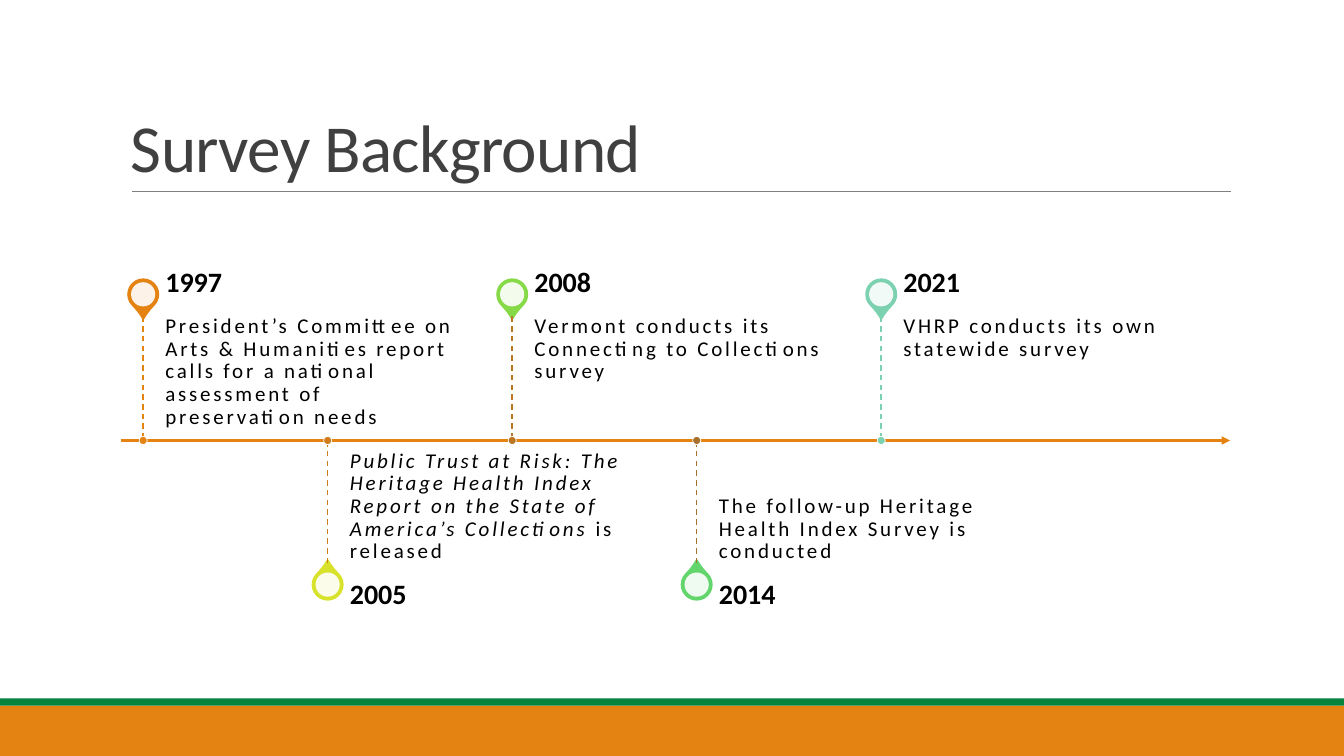
from lxml.etree import SubElement
from pptx import Presentation
from pptx.dml.color import RGBColor
from pptx.enum.dml import MSO_LINE
from pptx.enum.shapes import MSO_CONNECTOR, MSO_SHAPE
from pptx.enum.text import MSO_ANCHOR
from pptx.oxml.ns import qn
from pptx.util import Inches, Pt

COLORS = {
    "orange": "E48312",
    "green": "05823B",
    "rule": "808080",
    "title": "404040",
    "text": "000000",
    "white": "FFFFFF",
}
AXIS_Y = 4.37
FIRST_X = 1.42
STEP_X = 1.83
PIN_SIZE = 0.3
HOLE_SIZE = 0.24
DOT_SIZE = 0.08
TEXT_GAP = 0.22
TEXT_WIDTH = 3.05
STORY_HEIGHT = 1.23
YEAR_HEIGHT = 0.43

EVENTS = [
    ("1997", "E48312", "E48312", [
        ("President’s Committee on Arts & Humanities report calls for "
         "a national assessment of preservation needs", False)]),
    ("2005", "D8E22A", "CF7D1C", [
        ("Public Trust at Risk: The Heritage Health Index Report on "
         "the State of America’s Collections ", True),
        ("is released", False)]),
    ("2008", "86DA47", "BA7624", [
        ("Vermont conducts its Connecting to Collections survey", False)]),
    ("2014", "63D56D", "A7702C", [
        ("The follow-up Heritage Health Index Survey is conducted", False)]),
    ("2021", "7CD1B0", "7CD1B0", [
        ("VHRP conducts its own statewide survey", False)]),
]


def add_filled(slide, preset, left, top, width, height, fill, edge=None, edge_width=0):
    figure = slide.shapes.add_shape(
        preset, Inches(left), Inches(top), Inches(width), Inches(height))
    figure.shadow.inherit = False
    figure.fill.solid()
    figure.fill.fore_color.rgb = RGBColor.from_string(fill)
    if edge:
        figure.line.color.rgb = RGBColor.from_string(edge)
        figure.line.width = Pt(edge_width)
    else:
        figure.line.fill.background()
    return figure


def add_circle(slide, center_x, center_y, size, fill, edge=None, edge_width=0):
    return add_filled(slide, MSO_SHAPE.OVAL, center_x - size / 2, center_y - size / 2,
                      size, size, fill, edge, edge_width)


def add_line(slide, start, end, color, width):
    line = slide.shapes.add_connector(
        MSO_CONNECTOR.STRAIGHT, *(Inches(value) for value in start + end))
    line.line.color.rgb = RGBColor.from_string(color)
    line.line.width = Pt(width)
    SubElement(line._element.spPr, qn("a:effectLst"))
    return line


def add_text(slide, box, runs, size, color, anchor, insets,
             line_spacing=0.9, bold=False, tracking=0):
    label = slide.shapes.add_textbox(*(Inches(value) for value in box))
    frame = label.text_frame
    frame.word_wrap = True
    frame.vertical_anchor = anchor
    (frame.margin_left, frame.margin_top,
     frame.margin_right, frame.margin_bottom) = (Inches(value) for value in insets)
    paragraph = frame.paragraphs[0]
    paragraph.line_spacing = line_spacing
    for words, italic in runs:
        run = paragraph.add_run()
        run.text = words
        run.font.name = "Calibri"
        run.font.size = Pt(size)
        run.font.bold = bold
        run.font.italic = italic
        run.font.color.rgb = RGBColor.from_string(color)
        run._r.get_or_add_rPr().set("spc", str(round(tracking * 100)))


def add_axis(slide):
    axis = add_line(slide, (1.2, AXIS_Y), (12.2, AXIS_Y), COLORS["orange"], 1.5)
    SubElement(axis.line._get_or_add_ln(), qn("a:tailEnd"), type="triangle")


def add_pin(slide, x, y, color, rotation):
    pin = add_filled(slide, MSO_SHAPE.TEAR, x - PIN_SIZE / 2, y - PIN_SIZE / 2,
                     PIN_SIZE, PIN_SIZE, color, color, 1.25)
    pin.adjustments[0] = 1.15
    pin.rotation = rotation
    hole = add_circle(slide, x, y, HOLE_SIZE, COLORS["white"])
    tint = hole._element.spPr.find(qn("a:solidFill")).find(qn("a:srgbClr"))
    SubElement(tint, qn("a:alpha"), val="90000")


def add_event(slide, index, year, pin_color, stem_color, story):
    x = FIRST_X + index * STEP_X
    text_x = x + TEXT_GAP
    if index % 2 == 0:
        pin_y, stem_y, rotation = 2.92, 3.14, 135
        year_y, story_y = 2.6, 3.03
        anchor, insets = MSO_ANCHOR.TOP, (0, 0.1, 0.1, 0.16)
    else:
        pin_y, stem_y, rotation = 5.8, 5.59, 315
        year_y, story_y = 5.69, 4.46
        anchor, insets = MSO_ANCHOR.BOTTOM, (0, 0.16, 0, 0.1)
    add_pin(slide, x, pin_y, pin_color, rotation)
    add_text(slide, (text_x, story_y, TEXT_WIDTH, STORY_HEIGHT), story, 15,
             COLORS["text"], anchor, insets, tracking=2)
    add_text(slide, (text_x, year_y, TEXT_WIDTH, YEAR_HEIGHT), [(year, False)], 20,
             COLORS["text"], MSO_ANCHOR.MIDDLE, (0, 0, 0.14, 0), bold=True)
    stem = add_line(slide, (x, stem_y), (x, AXIS_Y), stem_color, 1)
    stem.line.dash_style = MSO_LINE.DASH
    add_circle(slide, x, AXIS_Y, DOT_SIZE, stem_color, COLORS["white"], 0.5)


def main():
    deck = Presentation()
    deck.slide_width = Inches(13.33)
    deck.slide_height = Inches(7.5)
    slide = deck.slides.add_slide(deck.slide_layouts[6])
    add_filled(slide, MSO_SHAPE.RECTANGLE, 0, 7, 13.33, 0.5, COLORS["orange"])
    add_filled(slide, MSO_SHAPE.RECTANGLE, 0, 6.93, 13.33, 0.07, COLORS["green"])
    add_line(slide, (1.31, 1.9), (12.21, 1.9), COLORS["rule"], 0.5)
    add_text(slide, (1.2, 0.31, 11, 1.59), [("Survey Background", False)], 48,
             COLORS["title"], MSO_ANCHOR.BOTTOM, (0.1, 0.05, 0.1, 0.05),
             line_spacing=0.85, tracking=-0.5)
    add_axis(slide)
    for index, event in enumerate(EVENTS):
        add_event(slide, index, *event)
    deck.save("out.pptx")


if __name__ == "__main__":
    main()
